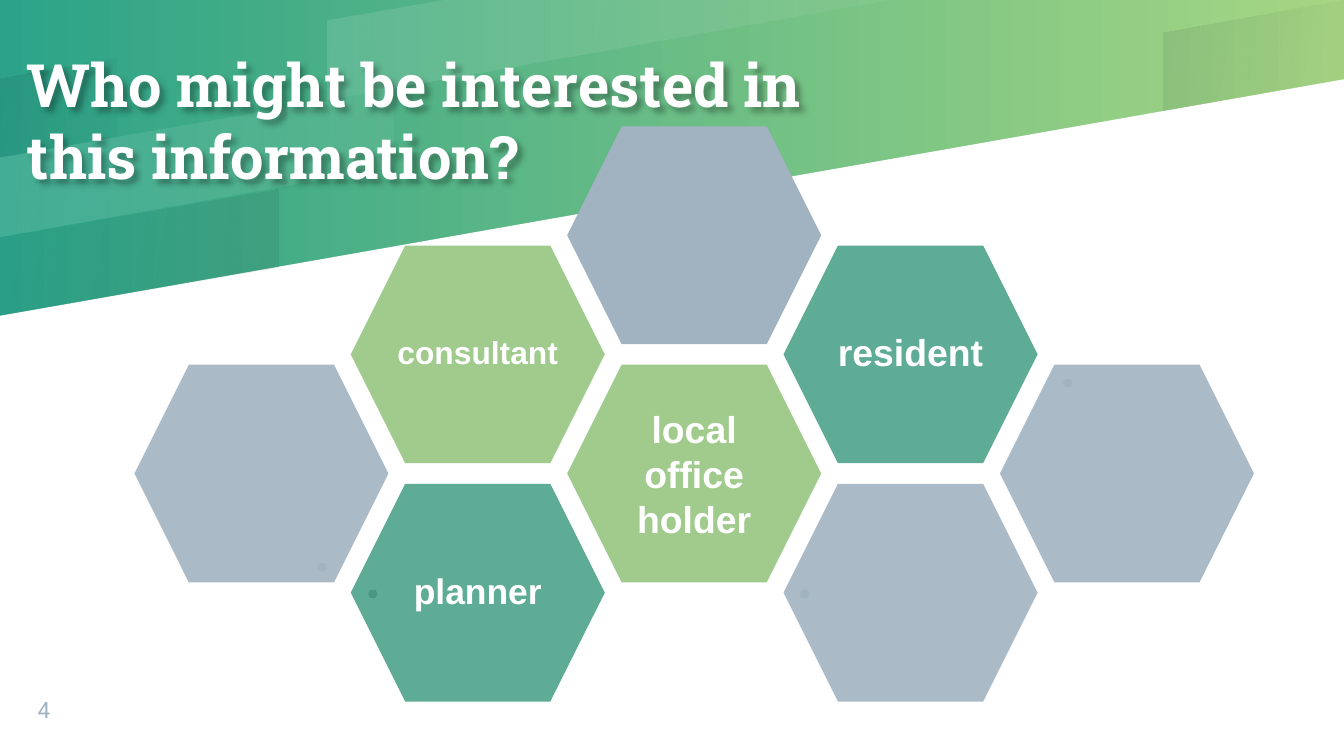
from typing import NamedTuple

from lxml.etree import SubElement
from pptx import Presentation
from pptx.dml.color import RGBColor
from pptx.dml.fill import FillFormat
from pptx.enum.shapes import MSO_SHAPE
from pptx.enum.text import MSO_ANCHOR, PP_ALIGN
from pptx.oxml.ns import qn
from pptx.shapes.autoshape import Shape
from pptx.slide import Slide
from pptx.text.text import TextFrame
from pptx.util import Inches, Pt

WHITE = RGBColor(0xFF, 0xFF, 0xFF)
INK = RGBColor(0x00, 0x00, 0x1A)
TEAL = RGBColor(0x2C, 0xA3, 0x88)
LIME = RGBColor(0xA6, 0xD6, 0x83)
GREEN = RGBColor(0x5E, 0xAB, 0x96)
DEEP_GREEN = RGBColor(0x4A, 0x98, 0x82)
LIGHT_GREEN = RGBColor(0xA0, 0xCB, 0x8D)
GREY = RGBColor(0xA1, 0xB3, 0xC0)
PAGE_GREY = RGBColor(0x9E, 0xB3, 0xC2)

# Honeycomb grid, in inches
HEX_W, HEX_H = 1.89, 1.62
GRID_LEFT, GRID_TOP = 1.0, 0.94
COL_STEP, ROW_STEP = 1.61, 2.66 / 3


class Band(NamedTuple):
    points: list[tuple[float, float]]
    color: RGBColor
    alphas: tuple[int, int]


class Cell(NamedTuple):
    col: int
    row: int
    color: RGBColor
    alpha: int = 100
    label: str = ""
    size: int = 20
    spacing: float = 0.9


class Dot(NamedTuple):
    left: float
    top: float
    color: RGBColor


PAPER = [(0, 5.63), (10, 5.63), (10, 0.59), (0, 2.35)]

BANDS = [
    Band([(3.32, 0), (2.44, 0.15), (2.44, 0.74), (6.65, 0)], WHITE, (12, 5)),
    Band([(0, 0.58), (0, 1.17), (0.87, 1.02), (0.87, 0.43)], INK, (8, 2)),
    Band([(0, 1.76), (0, 2.35), (2.07, 1.99), (2.07, 1.4)], INK, (2, 8)),
    Band([(10, 0), (9.99, 0), (8.66, 0.24), (8.66, 0.82), (10, 0.59)], INK, (8, 2)),
    Band([(0, 1.17), (0, 1.76), (2.93, 1.24), (2.93, 0.66)], WHITE, (12, 5)),
]

CELLS = [
    Cell(1, 3, GREEN, label="planner", size=19),
    Cell(0, 2, GREY, 90),
    Cell(2, 2, LIGHT_GREEN, label="local office holder", spacing=1.0),
    Cell(3, 3, GREY, 90),
    Cell(1, 1, LIGHT_GREEN, label="consultant", size=17),
    Cell(2, 0, GREY),
    Cell(3, 1, GREEN, label="resident"),
    Cell(4, 2, GREY, 90),
]

DOTS = [
    Dot(2.74, 4.39, DEEP_GREEN),
    Dot(2.36, 4.19, GREY),
    Dot(5.95, 4.39, GREY),
    Dot(7.91, 2.82, GREY),
]


def set_alphas(sp: Shape, alphas: tuple[int, ...]) -> None:
    colors = list(sp._element.spPr.iter(qn("a:srgbClr")))
    for color, alpha in zip(colors, alphas):
        SubElement(color, qn("a:alpha"), val=str(alpha * 1000))


def set_gradient(fill: FillFormat, start: RGBColor, end: RGBColor, angle: int) -> None:
    fill.gradient()
    fill.gradient_angle = angle
    for stop, color in zip(fill.gradient_stops, (start, end)):
        stop.color.rgb = color


def add_outline(s: Slide, points: list[tuple[float, float]]) -> Shape:
    corners = [(Inches(x), Inches(y)) for x, y in points]
    builder = s.shapes.build_freeform(*corners[0])
    builder.add_line_segments(corners[1:], close=True)
    sp = builder.convert_to_shape()
    sp.shadow.inherit = False
    sp.line.fill.background()
    return sp


def add_hexagon(s: Slide, left: float, top: float, width: float, height: float,
                color: RGBColor) -> Shape:
    sp = s.shapes.add_shape(MSO_SHAPE.HEXAGON, Inches(left), Inches(top),
                            Inches(width), Inches(height))
    sp.shadow.inherit = False
    sp.fill.solid()
    sp.fill.fore_color.rgb = color
    sp.line.fill.background()
    return sp


def add_text(tf: TextFrame, text: str, font: str, size: int, color: RGBColor,
             bold: bool, anchor: MSO_ANCHOR, align: PP_ALIGN,
             spacing: float = 1.0) -> None:
    tf.word_wrap = True
    tf.margin_left = tf.margin_right = tf.margin_top = tf.margin_bottom = 0
    tf.vertical_anchor = anchor
    p = tf.paragraphs[0]
    p.alignment = align
    p.line_spacing = spacing
    r = p.add_run()
    r.text = text
    r.font.name = font
    r.font.size = Pt(size)
    r.font.bold = bold
    r.font.color.rgb = color


def add_soft_shadow(sp: Shape) -> None:
    effects = SubElement(sp._element.spPr, qn("a:effectLst"))
    shadow = SubElement(effects, qn("a:outerShdw"), blurRad="38100",
                        dist="38100", dir="2700000", algn="tl")
    color = SubElement(shadow, qn("a:srgbClr"), val="000000")
    SubElement(color, qn("a:alpha"), val="30000")


def add_cell(s: Slide, cell: Cell) -> None:
    sp = add_hexagon(s, GRID_LEFT + cell.col * COL_STEP,
                     GRID_TOP + cell.row * ROW_STEP, HEX_W, HEX_H, cell.color)
    if cell.alpha < 100:
        set_alphas(sp, (cell.alpha,))
    if cell.label:
        add_text(sp.text_frame, cell.label, "Arial", cell.size, WHITE, True,
                 MSO_ANCHOR.MIDDLE, PP_ALIGN.CENTER, cell.spacing)


def main() -> None:
    prs = Presentation()
    prs.slide_width = Inches(10)
    prs.slide_height = prs.slide_width * 9 // 16
    s = prs.slides.add_slide(prs.slide_layouts[6])

    # Gradient background, white paper and slanted bands
    set_gradient(s.background.fill, TEAL, LIME, 0)
    paper = add_outline(s, PAPER)
    paper.fill.solid()
    paper.fill.fore_color.rgb = WHITE
    for band in BANDS:
        sp = add_outline(s, band.points)
        set_gradient(sp.fill, band.color, band.color, 350)
        set_alphas(sp, band.alphas)

    # Honeycomb
    for cell in CELLS:
        add_cell(s, cell)
    for dot in DOTS:
        add_hexagon(s, dot.left, dot.top, 0.07, 0.06, dot.color)

    # Title
    title = s.shapes.add_textbox(Inches(0.2), Inches(-0.1), Inches(6), Inches(1.98))
    add_text(title.text_frame, "Who might be interested in this information?",
             "Roboto Slab", 32, WHITE, True, MSO_ANCHOR.MIDDLE, PP_ALIGN.LEFT)
    add_soft_shadow(title)

    # Page number
    number = s.shapes.add_textbox(Inches(0.28), Inches(5.11), Inches(0.53), Inches(0.27))
    add_text(number.text_frame, "4", "Roboto", 12, PAGE_GREY, False,
             MSO_ANCHOR.BOTTOM, PP_ALIGN.LEFT)

    prs.save("out.pptx")


if __name__ == "__main__":
    main()
